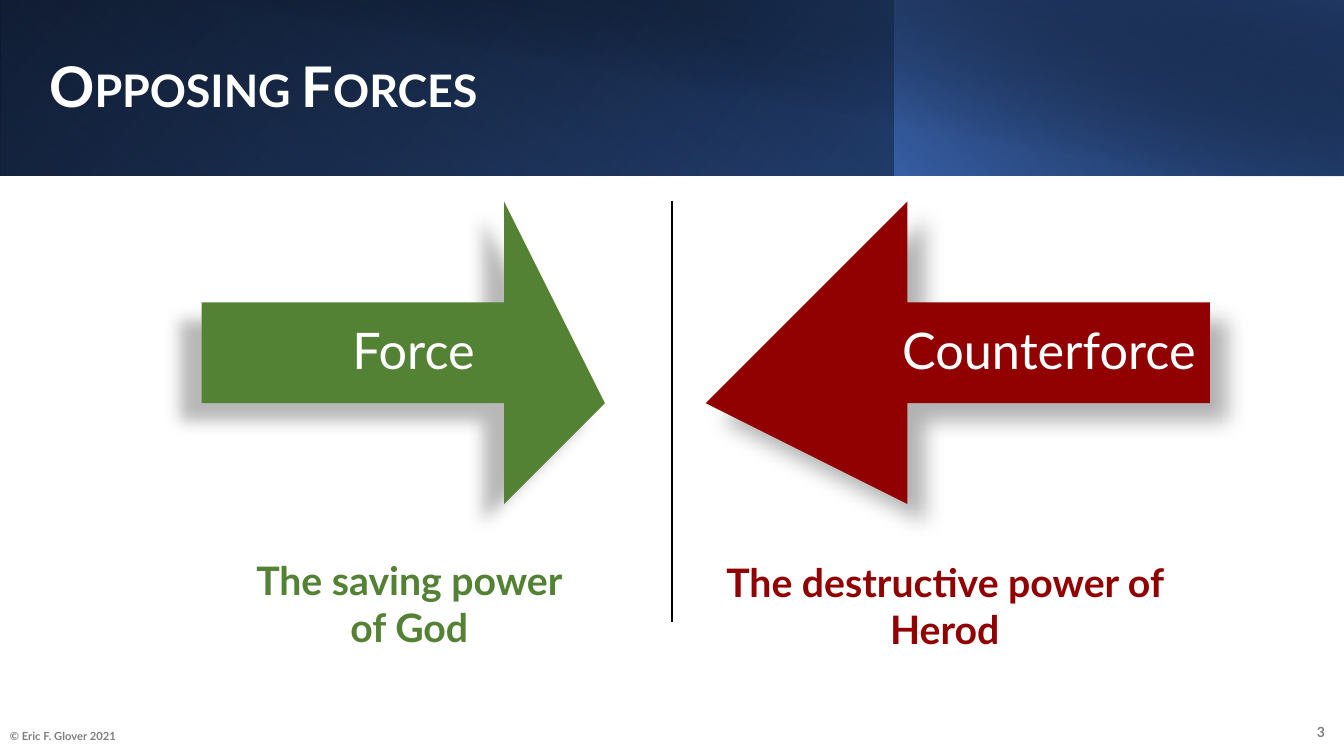
from pptx import Presentation
from pptx import util as u
from pptx.dml.color import RGBColor
from pptx.enum import shapes as sh, text as tx
from pptx.oxml import parse_xml
from pptx.oxml.ns import nsdecls, qn
from dataclasses import dataclass


@dataclass
class Theme:
    font: str = "Lato"
    white: str = "FFFFFF"
    black: str = "000000"
    grey: str = "808080"
    edge: str = "767171"
    green: str = "548235"
    red: str = "910101"
    head: int = 40
    big: int = 36
    body: int = 28
    page: int = 10
    note: int = 8


T = Theme()
WIDE, HIGH = 13.33, 7.5

# Content
TITLE = "Opposing Forces"
# word, colour, arrow left, points left, insets (left, right), shadow
ARROWS = [
    ("Force", T.green, 1.93, False, (0.14, 1.29), (28, 11.8, 19.7, 141)),
    ("Counterforce", T.red, 7.26, True, (0.48, 0.14), (30, 15, 18, 45)),
]
# lines, colour, box
CLAIMS = [
    (["The saving power", "of God"], T.green, (1.94, 5.47, 4.24, 1.04)),
    (["The destructive power of Herod"], T.red, (7.04, 5.49, 4.66, 1.04)),
]
# line, size, alignment, box
NOTES = [
    ("© Eric F. Glover 2021", T.note, "LEFT", (0, 7.1, 3, 0.4)),
    ("3", T.page, "RIGHT", (12.75, 7.06, 0.49, 0.4)),
]
# box, turn, flipped, angle, stops (place, colour, opacity)
BANDS = [
    ((0, 0, WIDE, 1.74), 0, 1, 140, [(0, "000000", 100), (100, "2F5597", 100)]),
    ((0, 0, 8.88, 1.74), 180, 1, 230, [(20, "4472C4", 0), (100, "203864", 55)]),
    ((8.87, 0, 4.46, 1.74), 0, 1, 220, [(0, "4472C4", 66), (100, "000000", 30)]),
    ((0.5, 0, 12.83, 1.75), 0, 0, 280, [(50, "000000", 0), (99, "203864", 52)]),
]
# Arrow outline as shares of its box, pointing right
SIZE = (4.24, 2.62)
NECK = 0.65
TIPS = [(0, 0.25), (NECK, 0.25), (NECK, 0), (1, 0.5),
        (NECK, 1), (NECK, 0.75), (0, 0.75)]


def place(box):
    return [u.Inches(v) for v in box]


def tint(hue, alpha):
    return f'<a:srgbClr val="{hue}"><a:alpha val="{alpha * 1000}"/></a:srgbClr>'


def write(par, line, size, hue, bold=False):
    run = par.add_run()
    run.text = line
    font = run.font
    font.name, font.size, font.bold = T.font, u.Pt(size), bold
    font.color.rgb = RGBColor.from_string(hue)
    return font


def frame(box):
    area = slide.shapes.add_textbox(*place(box)).text_frame
    area.word_wrap = True
    return area


deck = Presentation()
deck.slide_width, deck.slide_height = u.Inches(WIDE), u.Inches(HIGH)
slide = deck.slides.add_slide(deck.slide_layouts[5])

# Banner of layered gradients
for box, turn, flip, angle, stops in BANDS:
    band = slide.shapes.add_shape(sh.MSO_SHAPE.RECTANGLE, *place(box))
    band.rotation = turn
    band.shadow.inherit = False
    band.line.fill.background()
    props = band._element.spPr
    if flip:
        props.find(qn("a:xfrm")).set("flipH", "1")
    marks = "".join(f'<a:gs pos="{at * 1000}">{tint(hue, alpha)}</a:gs>'
                    for at, hue, alpha in stops)
    props.find(qn("a:prstGeom")).addnext(parse_xml(
        f'<a:gradFill {nsdecls("a")} rotWithShape="1"><a:gsLst>{marks}</a:gsLst>'
        f'<a:lin ang="{angle * 60000}" scaled="0"/></a:gradFill>'))

# Title, raised above the banner
title = slide.shapes.title
title.left, title.top, title.width, title.height = place((0.33, 0.32, 12.75, 1.13))
area = title.text_frame
area.auto_size = tx.MSO_AUTO_SIZE.NONE
area.vertical_anchor = tx.MSO_ANCHOR.MIDDLE
area.margin_left = u.Inches(0.16)
par = area.paragraphs[0]
par.alignment, par.line_spacing, par.space_after = tx.PP_ALIGN.LEFT, 0.9, u.Pt(6)
font = write(par, TITLE, T.head, T.white, True)
font._element.set("cap", "small")
slide.shapes._spTree.append(title._element)

# Footer
for line, size, side, box in NOTES:
    area = frame(box)
    area.vertical_anchor = tx.MSO_ANCHOR.MIDDLE
    par = area.paragraphs[0]
    par.alignment, par.space_after = tx.PP_ALIGN[side], u.Pt(6)
    write(par, line, size, T.grey, True)

# Facing arrows
for word, hue, left, back, pads, (alpha, blur, gap, angle) in ARROWS:
    dots = [(left + SIZE[0] * (1 - x if back else x), 2.27 + SIZE[1] * y)
            for x, y in TIPS]
    path = slide.shapes.build_freeform(*dots[0], scale=u.Inches(1))
    path.add_line_segments(dots[1:], close=True)
    arrow = path.convert_to_shape()
    arrow.fill.solid()
    arrow.fill.fore_color.rgb = RGBColor.from_string(hue)
    arrow.line.fill.background()
    arrow.shadow.inherit = False
    arrow._element.spPr.find(qn("a:effectLst")).append(parse_xml(
        f'<a:outerShdw {nsdecls("a")} blurRad="{u.Pt(blur)}" dist="{u.Pt(gap)}" '
        f'dir="{angle * 60000}" algn="ctr" rotWithShape="0">'
        f'{tint(T.black, alpha)}</a:outerShdw>'))
    area = arrow.text_frame
    area.word_wrap = True
    area.vertical_anchor = tx.MSO_ANCHOR.MIDDLE
    area.margin_left, area.margin_right = place(pads)
    area.margin_top = area.margin_bottom = u.Inches(0.63)
    par = area.paragraphs[0]
    par.alignment, par.line_spacing = tx.PP_ALIGN.RIGHT, 0.9
    write(par, word, T.big, T.white)

# Claims under the arrows
for lines, hue, box in CLAIMS:
    area = frame(box)
    area.auto_size = tx.MSO_AUTO_SIZE.SHAPE_TO_FIT_TEXT
    par = area.paragraphs[0]
    par.alignment = tx.PP_ALIGN.CENTER
    for i, line in enumerate(lines):
        if i:
            par.add_line_break()
        font = write(par, line, T.body, hue, True)
        font._element.insert(0, parse_xml(
            f'<a:ln {nsdecls("a")} w="{u.Pt(0.75)}"><a:solidFill>'
            f'{tint(T.edge, 100)}</a:solidFill></a:ln>'))

# Divider
rule = slide.shapes.add_connector(
    sh.MSO_CONNECTOR.STRAIGHT, *place((WIDE / 2, 1.99, WIDE / 2, 6.17)))
rule.line.width = u.Pt(2)
rule.line.color.rgb = RGBColor.from_string(T.black)
rule._element.spPr.append(parse_xml(f'<a:effectLst {nsdecls("a")}/>'))

deck.save("out.pptx")
